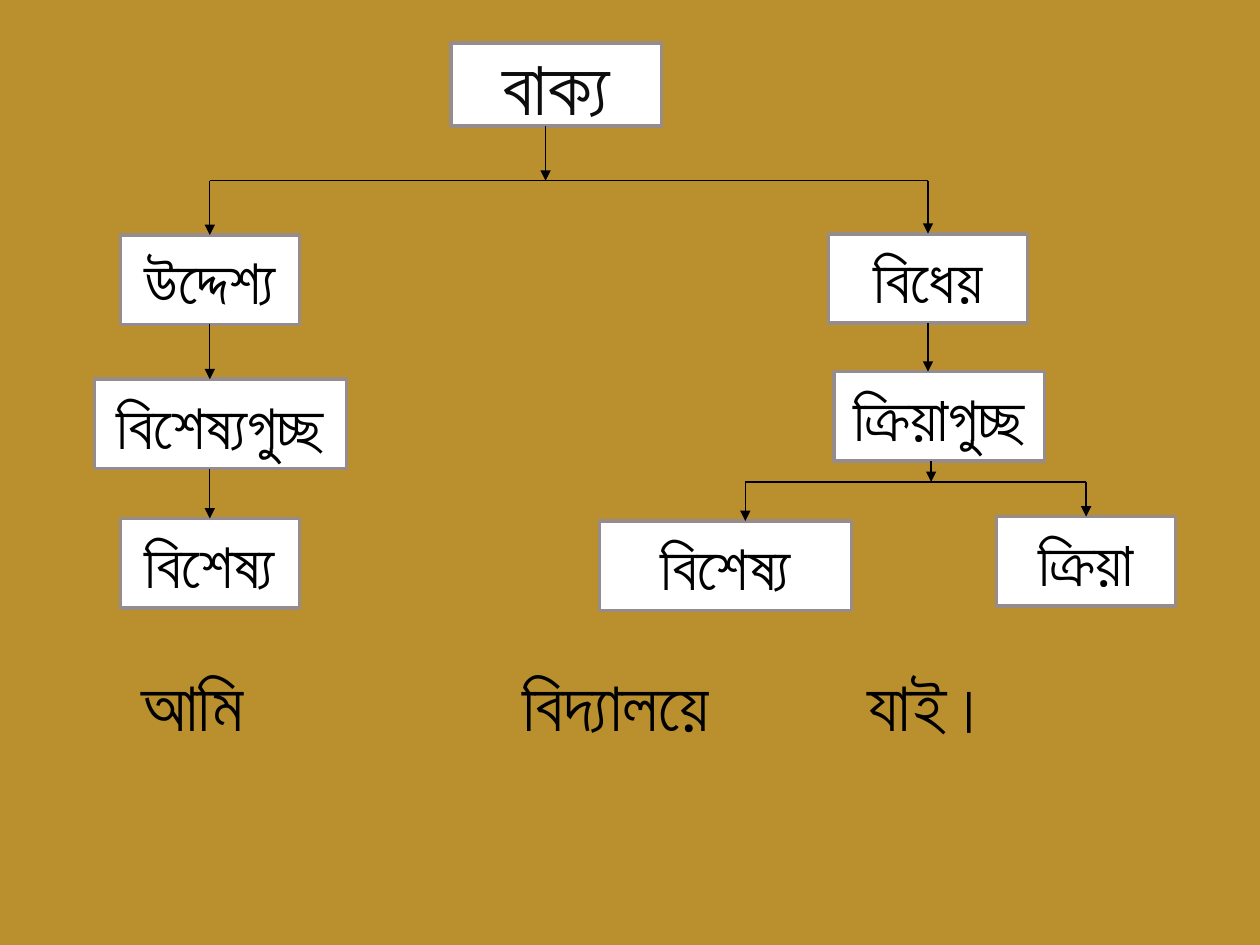
from lxml.etree import SubElement
from pptx import Presentation
from pptx.dml.color import RGBColor
from pptx.enum.shapes import MSO_CONNECTOR, MSO_SHAPE
from pptx.enum.text import MSO_ANCHOR, MSO_AUTO_SIZE, PP_ALIGN
from pptx.oxml.ns import qn
from pptx.util import Inches, Pt

COLORS = {"back": "BA8F2D", "box": "FFFFFF", "edge": "968C8C", "line": "000000",
          "text": "000000", "root": "0D0D0D"}
COLS, ROWS = 100, 75
CELL = Inches(10) / COLS
BOX_H = 7.1
TOP, BOTTOM = 0, 2
YA_NUKTA, YYA = chr(0x09AF) + chr(0x09BC), chr(0x09DF)
ROOT_FORMAT = {"size": Pt(44), "bold": True}
NODE_FORMAT = {"size": Pt(36)}
SENTENCE_FORMAT = {"size": Pt(40)}


def cells(*values):
    """Turn grid cells into lengths."""
    return [round(v * CELL) for v in values]


def rgb(name):
    """Look up a named colour."""
    return RGBColor.from_string(COLORS[name])


def write(p, text, formats, color="text"):
    """Add one formatted run, with the Bengali letter yya as a single character."""
    r = p.add_run()
    r.text = text.replace(YA_NUKTA, YYA)
    for key, value in {"name": "Arial", **formats}.items():
        setattr(r.font, key, value)
    r.font.color.rgb = rgb(color)
    SubElement(r.font._element, qn("a:cs"), typeface="Arial")


def add_node(s, text, x, y, w, h=BOX_H, formats=NODE_FORMAT, color="text"):
    """Draw one box of the tree."""
    sp = s.shapes.add_shape(MSO_SHAPE.FLOWCHART_PROCESS, *cells(x, y, w, h))
    sp.shadow.inherit = False
    sp.fill.solid()
    sp.fill.fore_color.rgb = rgb("box")
    sp.line.color.rgb = rgb("edge")
    sp.line.width = Pt(2)
    tf = sp.text_frame
    tf.word_wrap = True
    tf.vertical_anchor = MSO_ANCHOR.MIDDLE
    p = tf.paragraphs[0]
    p.alignment = PP_ALIGN.CENTER
    write(p, text, formats, color)
    return sp


def add_link(s, x1, y1, x2, y2, arrow=True, begin=None, end=None):
    """Draw a line and join it to the boxes whose side middles it meets."""
    line = s.shapes.add_connector(MSO_CONNECTOR.STRAIGHT, *cells(x1, y1, x2, y2))
    line.line.color.rgb = rgb("line")
    line.line.width = Pt(0.75)
    if arrow:
        SubElement(line.line._get_or_add_ln(), qn("a:tailEnd"), type="triangle")
    SubElement(line._element.spPr, qn("a:effectLst"))
    if begin is not None:
        line.begin_connect(begin, BOTTOM)
    if end is not None:
        line.end_connect(end, TOP)


def add_subject(s, x, y):
    """Place the subject branch and return its top box."""
    axis = x + 9.15
    subject = add_node(s, "উদ্দেশ্য", x + 2.05, y + 4.25, 14.2)
    add_node(s, "বিশেষ্যগুচ্ছ", x, y + 15.7, 20)
    noun = add_node(s, "বিশেষ্য", x + 2.05, y + 26.75, 14.2)
    add_link(s, axis, y + 11.35, axis, y + 15.7, begin=subject)
    add_link(s, axis, y + 22.8, axis, y + 26.75, end=noun)
    return subject


def add_predicate(s, x, y):
    """Place the predicate branch and return its top box."""
    axis, fork, left, right = x + 26.05, y + 23.85, x + 11.55, x + 38.6
    predicate = add_node(s, "বিধেয়", x + 18.15, y + 4.15, 15.8)
    add_node(s, "ক্রিয়াগুচ্ছ", x + 18.6, y + 15.1, 16.7)
    add_node(s, "বিশেষ্য", x, y + 26.95, 20)
    verb = add_node(s, "ক্রিয়া", x + 31.5, y + 26.6, 14.2)
    add_link(s, axis, y + 11.25, axis, y + 15.1, begin=predicate)
    add_link(s, x + 26.3, y + 22.2, x + 26.3, fork)
    add_link(s, left, fork, right, fork, arrow=False)
    add_link(s, left, fork, left, y + 26.95)
    add_link(s, right, fork, right, y + 26.6, end=verb)
    return predicate


def add_root(s, x, y, w, branches):
    """Place the root box and the fork that leads to the branches."""
    fork = y + 10.95
    add_node(s, "বাক্য", x + 19.15, y, 16.7, 6.6, ROOT_FORMAT, "root")
    add_link(s, x + 26.65, y + 6.6, x + 26.65, fork)
    add_link(s, x, fork, x + w, fork, arrow=False)
    for stem, branch in zip((x, x + w), branches):
        add_link(s, stem, fork, stem, fork + 4.3, end=branch)


def add_sentence(s, x, y, w, h):
    """Place the example sentence, its words set apart by tab stops."""
    tf = s.shapes.add_textbox(*cells(x, y, w, h)).text_frame
    formats = {"word_wrap": True, "auto_size": MSO_AUTO_SIZE.SHAPE_TO_FIT_TEXT,
               "margin_left": cells(3.75)[0]}
    for key, value in formats.items():
        setattr(tf, key, value)
    p = tf.paragraphs[0]
    tabs = SubElement(p._p.get_or_add_pPr(), qn("a:tabLst"))
    for stop in cells(30.2, 57.6):
        SubElement(tabs, qn("a:tab"), pos=str(stop), algn="l")
    write(p, "আমি\tবিদ্যালয়ে\tযাই।", SENTENCE_FORMAT)


def main():
    """Build the sentence tree slide."""
    prs = Presentation()
    prs.slide_width, prs.slide_height = cells(COLS, ROWS)
    s = prs.slides.add_slide(prs.slide_layouts[6])
    s.background.fill.solid()
    s.background.fill.fore_color.rgb = rgb("back")
    branches = add_subject(s, 7.5, 14.4), add_predicate(s, 47.6, 14.4)
    add_root(s, 16.65, 3.4, 57, branches)
    add_sentence(s, 7.5, 52.05, 87.5, 7.7)
    prs.save("out.pptx")


if __name__ == "__main__":
    main()
